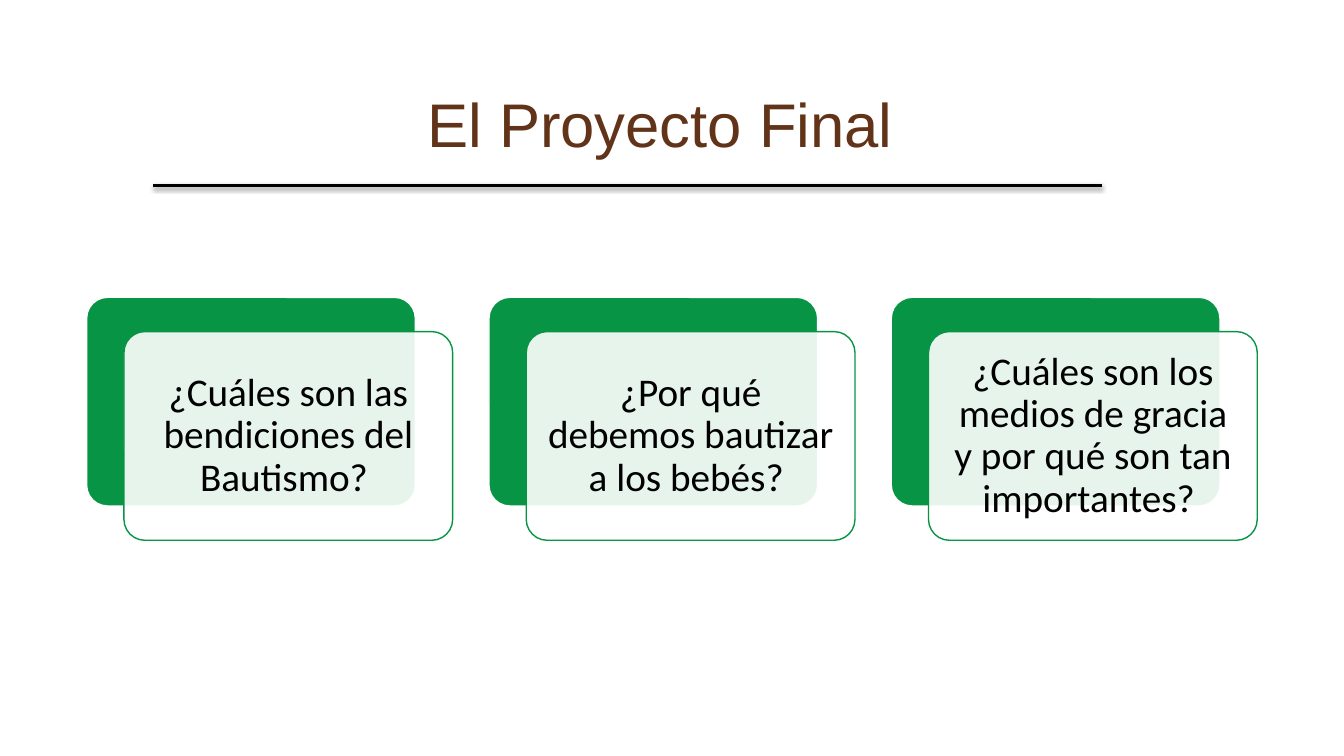
import lxml.etree
import pptx
import pptx.dml.color
import pptx.enum.shapes
import pptx.enum.text
import pptx.oxml
import pptx.oxml.ns
import pptx.util

Inches = pptx.util.Inches
Pt = pptx.util.Pt
RGBColor = pptx.dml.color.RGBColor
qn = pptx.oxml.ns.qn

WHITE = RGBColor(0xFF, 0xFF, 0xFF)
BLACK = RGBColor(0x00, 0x00, 0x00)
GREEN = RGBColor(0x07, 0x94, 0x44)
BROWN = RGBColor(0x61, 0x33, 0x18)

TITLE = "El Proyecto Final"
QUESTIONS = [
    "¿Cuáles son las bendiciones del Bautismo? ",
    "¿Por qué debemos bautizar a los bebés? ",
    "¿Cuáles son los medios de gracia y por qué son tan importantes? ",
]

RULE_SHADOW = (
    '<a:effectLst xmlns:a="http://schemas.openxmlformats.org/drawingml/2006/main">'
    '<a:outerShdw blurRad="39370" dist="20320" dir="5400000" rotWithShape="0">'
    '<a:srgbClr val="000000"><a:alpha val="38000"/></a:srgbClr>'
    '</a:outerShdw></a:effectLst>'
)


def add_text(slide, left, top, width, height, text, font, size, color):
    """Add a wrapped, centred text box and return it."""
    box = slide.shapes.add_textbox(
        Inches(left), Inches(top), Inches(width), Inches(height))
    box.text_frame.word_wrap = True
    paragraph = box.text_frame.paragraphs[0]
    paragraph.alignment = pptx.enum.text.PP_ALIGN.CENTER
    run = paragraph.add_run()
    run.text = text
    run.font.name = font
    run.font.size = Pt(size)
    run.font.color.rgb = color
    return box


def add_heading(slide, left, top, width, height):
    """Title with a shadowed rule below it."""
    add_text(slide, left, top, width, height, TITLE, "Arial", 44, BROWN)
    rule_left, rule_top = left + 0.77, top + 1.04
    rule = slide.shapes.add_connector(
        pptx.enum.shapes.MSO_CONNECTOR.STRAIGHT,
        Inches(rule_left), Inches(rule_top),
        Inches(rule_left + 9.41), Inches(rule_top))
    rule.line.color.rgb = BLACK
    rule.line.width = Pt(2)
    rule._element.spPr.append(pptx.oxml.parse_xml(RULE_SHADOW))


def add_panel(slide, left, top, width, height, fill, line):
    """Add one rounded panel and return it."""
    panel = slide.shapes.add_shape(
        pptx.enum.shapes.MSO_SHAPE.ROUNDED_RECTANGLE,
        Inches(left), Inches(top), Inches(width), Inches(height))
    panel.adjustments[0] = 0.1
    panel.shadow.inherit = False
    panel.fill.solid()
    panel.fill.fore_color.rgb = fill
    panel.line.color.rgb = line
    panel.line.width = Pt(1)
    return panel


def add_question_card(slide, left, top, width, height, question):
    """Green panel, translucent panel offset over it, and the question."""
    offset_x, offset_y, margin = 0.37, 0.34, 0.06
    panel_width, panel_height = width - offset_x, height - offset_y
    add_panel(slide, left, top, panel_width, panel_height, GREEN, WHITE)

    front_left, front_top = left + offset_x, top + offset_y
    front = add_panel(slide, front_left, front_top, panel_width, panel_height,
                      WHITE, GREEN)
    fill_color = front._element.spPr.find(qn("a:solidFill"))[0]
    lxml.etree.SubElement(fill_color, qn("a:alpha"), val="90000")

    box = add_text(slide, front_left + margin, front_top + margin,
                   panel_width - 2 * margin, panel_height - 2 * margin,
                   question, "Calibri", 28, BLACK)
    frame = box.text_frame
    frame.vertical_anchor = pptx.enum.text.MSO_ANCHOR.MIDDLE
    frame.margin_left = frame.margin_right = Inches(0.12)
    frame.margin_top = frame.margin_bottom = Inches(0.12)
    frame.paragraphs[0].line_spacing = 0.9


def add_question_row(slide, left, top, width, height):
    """Cards spread evenly across the row."""
    gap = 0.36
    card_width = (width - gap * (len(QUESTIONS) - 1)) / len(QUESTIONS)
    for index, question in enumerate(QUESTIONS):
        add_question_card(slide, left + index * (card_width + gap), top,
                          card_width, height, question)


def main():
    presentation = pptx.Presentation()
    presentation.slide_width = Inches(13.33)
    presentation.slide_height = Inches(7.5)
    slide = presentation.slides.add_slide(presentation.slide_layouts[6])
    slide.background.fill.solid()
    slide.background.fill.fore_color.rgb = WHITE
    add_heading(slide, 0.75, 0.8, 11.6, 2.54)
    add_question_row(slide, 0.86, 2.95, 11.61, 2.41)
    presentation.save("out.pptx")


if __name__ == "__main__":
    main()
